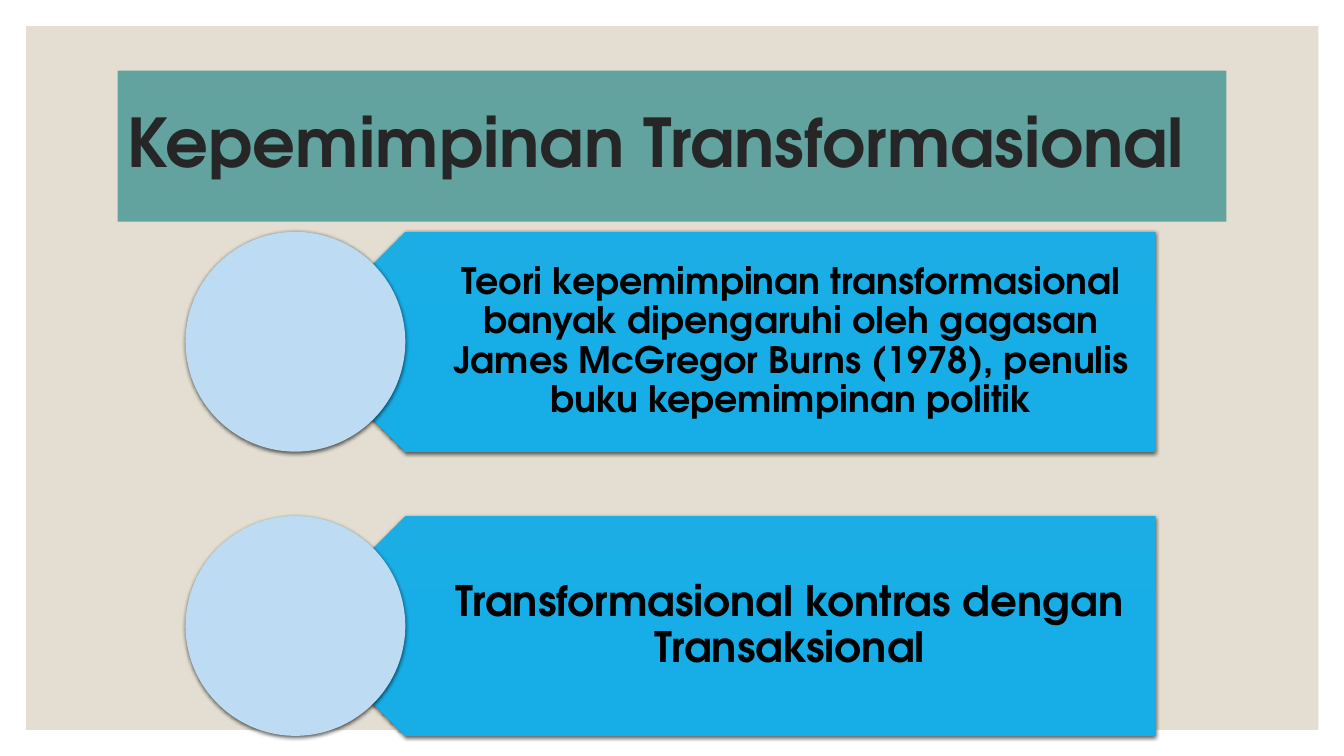
from lxml.etree import SubElement
from pptx import Presentation
from pptx.dml.color import RGBColor
from pptx.enum.shapes import MSO_SHAPE as Shape
from pptx.enum.text import MSO_ANCHOR as Anchor, MSO_AUTO_SIZE as AutoSize, PP_ALIGN as Align
from pptx.oxml.ns import qn
from pptx.util import Pt

COLORS = {"panel": "E3DED1", "title_fill": "62A39F", "title": "262626",
          "arrow_top": "1CADE4", "arrow_base": "17AEE8",
          "circle": "BDDBF2", "text": "000000", "shadow": "000000"}
FONT = "TeX Gyre Adventor"

# Text, font size, vertical inset, right inset
POINTS = [
    ("Teori kepemimpinan transformasional banyak dipengaruhi oleh gagasan "
     "James McGregor Burns (1978), penulis buku kepemimpinan politik", 26, 8, 14.4),
    ("Transformasional kontras dengan Transaksional", 30, 8.6, 16.5),
]
TOP, PITCH, HEIGHT = 165.6, 203, 157


class SlideBuilder:
    def __init__(self, slide):
        self.slide = slide
        self.shapes = slide.shapes

    def color(self, name):
        return RGBColor.from_string(COLORS[name])

    def fill(self, shape, name):
        shape.fill.solid()
        shape.fill.fore_color.rgb = self.color(name)

    def place(self, shape, *area):
        for side, length in zip(("left", "top", "width", "height"), area):
            setattr(shape, side, Pt(length))

    def set_text(self, shape, text, size, color, align, space_after=0, **margins):
        frame = shape.text_frame
        settings = {"word_wrap": True, "auto_size": AutoSize.NONE,
                    "vertical_anchor": Anchor.MIDDLE}
        settings.update({f"margin_{side}": Pt(gap) for side, gap in margins.items()})
        for name, value in settings.items():
            setattr(frame, name, value)
        para = frame.paragraphs[0]
        for name, value in {"alignment": align, "line_spacing": 0.9,
                            "space_after": Pt(space_after)}.items():
            setattr(para, name, value)
        span = para.add_run()
        span.text = text
        for name, value in {"name": FONT, "size": Pt(size), "bold": True}.items():
            setattr(span.font, name, value)
        span.font.color.rgb = self.color(color)

    def shape(self, kind, *area):
        shape = self.shapes.add_shape(kind, *map(Pt, area))
        shape.shadow.inherit = False
        shape.line.fill.background()
        return shape

    def panel(self, *area):
        """Add the backdrop behind everything else, the title included."""
        panel = self.shape(Shape.RECTANGLE, *area)
        self.fill(panel, "panel")
        self.shapes.element.insert(2, panel.element)

    def title(self, text, *area):
        title = self.shapes.title
        self.place(title, *area)
        self.fill(title, "title_fill")
        self.set_text(title, text, 48, "title", Align.LEFT)

    def cast_shadow(self, shape):
        effects = shape.element.spPr.find(qn("a:effectLst"))
        shadow = SubElement(effects, qn("a:outerShdw"), blurRad=str(Pt(3)),
                            dist=str(Pt(1)), dir="5400000", rotWithShape="0")
        color = SubElement(shadow, qn("a:srgbClr"), val=COLORS["shadow"])
        SubElement(color, qn("a:alpha"), val="63000")

    def arrow(self, *area):
        arrow = self.shape(Shape.PENTAGON, *area)
        arrow.rotation = 180
        arrow.fill.gradient()
        arrow.fill.gradient_angle = 270
        stops = zip(arrow.fill.gradient_stops, (0, 0.5), ("arrow_top", "arrow_base"))
        for stop, position, name in stops:
            stop.position = position
            stop.color.rgb = self.color(name)
        arrow.element.spPr.find(qn("a:gradFill")).set("rotWithShape", "0")
        self.cast_shadow(arrow)

    def circle(self, left, top, diameter):
        circle = self.shape(Shape.OVAL, left, top, diameter, diameter)
        self.fill(circle, "circle")
        self.cast_shadow(circle)

    def text(self, text, size, *area, **margins):
        box = self.shapes.add_textbox(*map(Pt, area))
        self.set_text(box, text, size, "text", Align.CENTER, 0.35 * size, **margins)


def main():
    deck = Presentation()
    deck.slide_width, deck.slide_height = Pt(960), Pt(540)
    page = SlideBuilder(deck.slides.add_slide(deck.slide_layouts[5]))
    page.panel(18.7, 18.7, 923, 502.6)
    page.title("Kepemimpinan Transformasional", 84, 50.4, 792, 108)
    for index, (text, size, inset, right) in enumerate(POINTS):
        top = TOP + index * PITCH
        page.arrow(211, top, 614.4, HEIGHT)
        page.text(text, size, 250.6, top, 574.6, HEIGHT,
                  left=69.1, top=inset, right=right, bottom=inset)
        page.circle(132.5, top, HEIGHT)
    deck.save("out.pptx")


if __name__ == "__main__":
    main()
